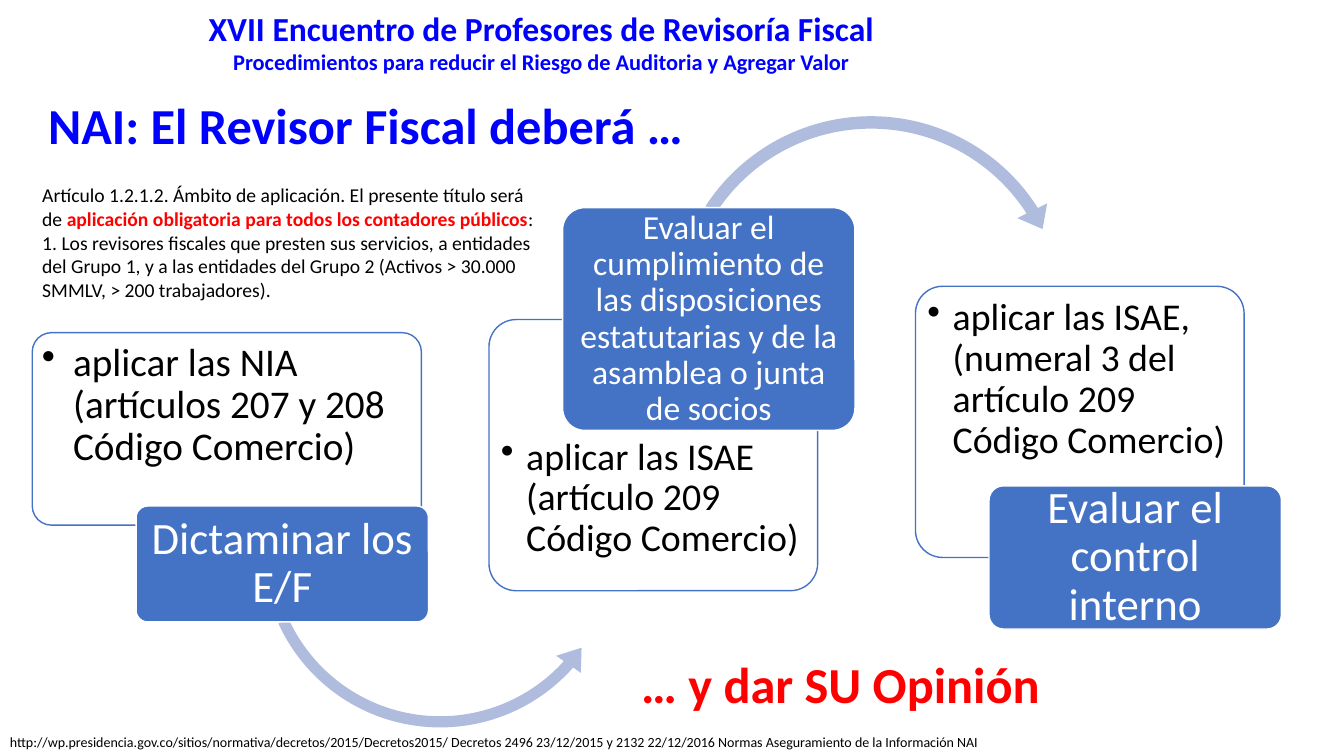
import dataclasses

import lxml.etree
import pptx
import pptx.dml.color
import pptx.enum.shapes
import pptx.enum.text
import pptx.oxml.ns
import pptx.util

SHAPE = pptx.enum.shapes.MSO_SHAPE
ALIGN = pptx.enum.text.PP_ALIGN
ANCHOR = pptx.enum.text.MSO_ANCHOR
SLIDE_WIDTH = pptx.util.Inches(13.33)
SLIDE_HEIGHT = pptx.util.Inches(7.5)
GRID_ROWS = 75


@dataclasses.dataclass(frozen=True)
class Theme:
    """Font, colours and type sizes of the slide."""
    font: str = "Calibri"
    heading: str = "0000FF"
    accent: str = "FF0000"
    ink: str = "000000"
    white: str = "FFFFFF"
    block: str = "4472C4"
    arrow: str = "B0BCDE"
    title: int = 36
    event: int = 24
    subtitle: int = 16
    article: int = 14
    source: int = 10


THEME = Theme()


def cells(count):
    """Convert a number of square grid cells to a length."""
    return round(count * SLIDE_HEIGHT / GRID_ROWS)


def rgb(value):
    """Turn a hex string into a colour."""
    return pptx.dml.color.RGBColor.from_string(value)


def style(r, size, color, bold=False):
    """Format one run."""
    r.font.name = THEME.font
    r.font.size = pptx.util.Pt(size)
    r.font.color.rgb = rgb(color)
    r.font.bold = bold


def add_text(s, box, paragraphs, anchor=ANCHOR.TOP, align=ALIGN.LEFT, spacing=1.0):
    """Add a text box whose paragraphs are lists of (text, size, colour, bold)."""
    tf = s.shapes.add_textbox(*map(cells, box)).text_frame
    tf.word_wrap = True
    tf.vertical_anchor = anchor
    for i, runs in enumerate(paragraphs):
        p = tf.add_paragraph() if i else tf.paragraphs[0]
        p.alignment = align
        p.line_spacing = spacing
        for text, size, color, bold in runs:
            r = p.add_run()
            r.text = text
            style(r, size, color, bold)


def add_card(s, box, fill, line):
    """Add a rounded card with a thin outline."""
    sp = s.shapes.add_shape(SHAPE.ROUNDED_RECTANGLE, *map(cells, box))
    sp.adjustments[0] = 0.1
    sp.shadow.inherit = False
    sp.fill.solid()
    sp.fill.fore_color.rgb = rgb(fill)
    sp.line.color.rgb = rgb(line)
    sp.line.width = pptx.util.Pt(1)
    return sp


def fill_card(sp, text, size, color, align, anchor, margins):
    """Write one paragraph into a card and return it."""
    tf = sp.text_frame
    tf.word_wrap = True
    tf.vertical_anchor = anchor
    tf.margin_left = tf.margin_right = cells(margins[0])
    tf.margin_top, tf.margin_bottom = cells(margins[1]), cells(0.4)
    tf.text = text
    p = tf.paragraphs[0]
    p.alignment = align
    p.line_spacing = 0.9
    style(p.runs[0], size, color)
    return p


def add_panel(s, box, text, size, indent, top=0.4):
    """Add a white panel with one bulleted paragraph."""
    sp = add_card(s, box, THEME.white, THEME.block)
    p = fill_card(sp, text, size, THEME.ink, ALIGN.LEFT, ANCHOR.TOP, (0.4, top))
    pPr = p._p.get_or_add_pPr()
    pPr.set("marL", str(cells(indent)))
    pPr.set("indent", str(-cells(indent)))
    bullet = lxml.etree.SubElement(pPr, pptx.oxml.ns.qn("a:buChar"))
    bullet.set("char", "•")


def add_label(s, box, text, size, margin):
    """Add a solid label with centred text."""
    sp = add_card(s, box, THEME.block, THEME.white)
    fill_card(sp, text, size, THEME.white, ALIGN.CENTER, ANCHOR.MIDDLE, (margin, 0.4))


def add_arc(s, kind, box, adjustments):
    """Add a curved arrow between two stages."""
    sp = s.shapes.add_shape(kind, *map(cells, box))
    for i, value in enumerate(adjustments):
        sp.adjustments[i] = value
    sp.shadow.inherit = False
    sp.fill.solid()
    sp.fill.fore_color.rgb = rgb(THEME.arrow)
    sp.line.fill.background()


def add_stages(s):
    """Add the three stages and the arrows that join them."""
    add_panel(s, (3.2, 33, 38.6, 19.1),
              "aplicar las NIA (artículos 207 y 208 Código Comercio)", 28, 3.1)
    add_arc(s, SHAPE.LEFT_CIRCULAR_ARROW, (25.1, 36, 37.1, 37.1),
            (0.03, 4.23, 25.03, 93.29, 0.04))
    add_label(s, (13.5, 50.2, 29, 11.5), "Dictaminar los E/F", 32, 0.7)
    add_panel(s, (48.5, 31.7, 32.6, 26.9),
              "aplicar las ISAE (artículo 209 Código Comercio)", 27, 2.5, top=10.9)
    add_arc(s, SHAPE.CIRCULAR_ARROW, (65.8, 10.5, 41.2, 41.2),
            (0.03, 3.78, 196.49, 127.78, 0.04))
    add_label(s, (55.8, 20.6, 29, 22.1),
              "Evaluar el cumplimiento de las disposiciones estatutarias "
              "y de la asamblea o junta de socios", 24, 0.5)
    add_panel(s, (90.8, 28.4, 32.6, 26.9),
              "aplicar las ISAE, (numeral 3 del artículo 209 Código Comercio)", 27, 2.5)
    add_label(s, (98.1, 48.2, 29, 14.2), "Evaluar el control interno", 32, 0.7)


def main():
    """Build the slide and save it."""
    prs = pptx.Presentation()
    prs.slide_width, prs.slide_height = SLIDE_WIDTH, SLIDE_HEIGHT
    s = prs.slides.add_slide(prs.slide_layouts[6])
    t = THEME
    add_text(s, (19.4, 0.3, 68.6, 7.7), [
        [("XVII Encuentro de Profesores de Revisoría Fiscal", t.event, t.heading, True)],
        [("Procedimientos para reducir el Riesgo de Auditoria y Agregar Valor",
          t.subtitle, t.heading, True)],
    ], align=ALIGN.CENTER)
    add_text(s, (0, 72.3, 125.1, 2.7), [[
        ("http://wp.presidencia.gov.co/sitios/normativa/decretos/2015/Decretos2015/ "
         "Decretos 2496 23/12/2015 y 2132 22/12/2016 "
         "Normas Aseguramiento de la Información NAI", t.source, t.ink, False)]])
    add_text(s, (3.8, 8.3, 77.1, 8.9),
             [[("NAI: El Revisor Fiscal deberá …", t.title, t.heading, True)]],
             ANCHOR.MIDDLE, spacing=0.9)
    add_stages(s)
    add_text(s, (62.6, 63.7, 45.7, 8.9),
             [[("… y dar SU Opinión", t.title, t.accent, True)]],
             ANCHOR.MIDDLE, spacing=0.9)
    add_text(s, (3.2, 17.7, 52.2, 12.8), [
        [("Artículo 1.2.1.2. Ámbito de aplicación. El presente título será de ",
          t.article, t.ink, False),
         ("aplicación obligatoria para todos los contadores públicos",
          t.article, t.accent, True),
         (":", t.article, t.ink, False)],
        [("1. Los revisores fiscales que presten sus servicios, a entidades del Grupo 1, "
          "y a las entidades del Grupo 2 (Activos > 30.000 SMMLV, > 200 trabajadores).",
          t.article, t.ink, False)],
    ])
    prs.save("out.pptx")


if __name__ == "__main__":
    main()
